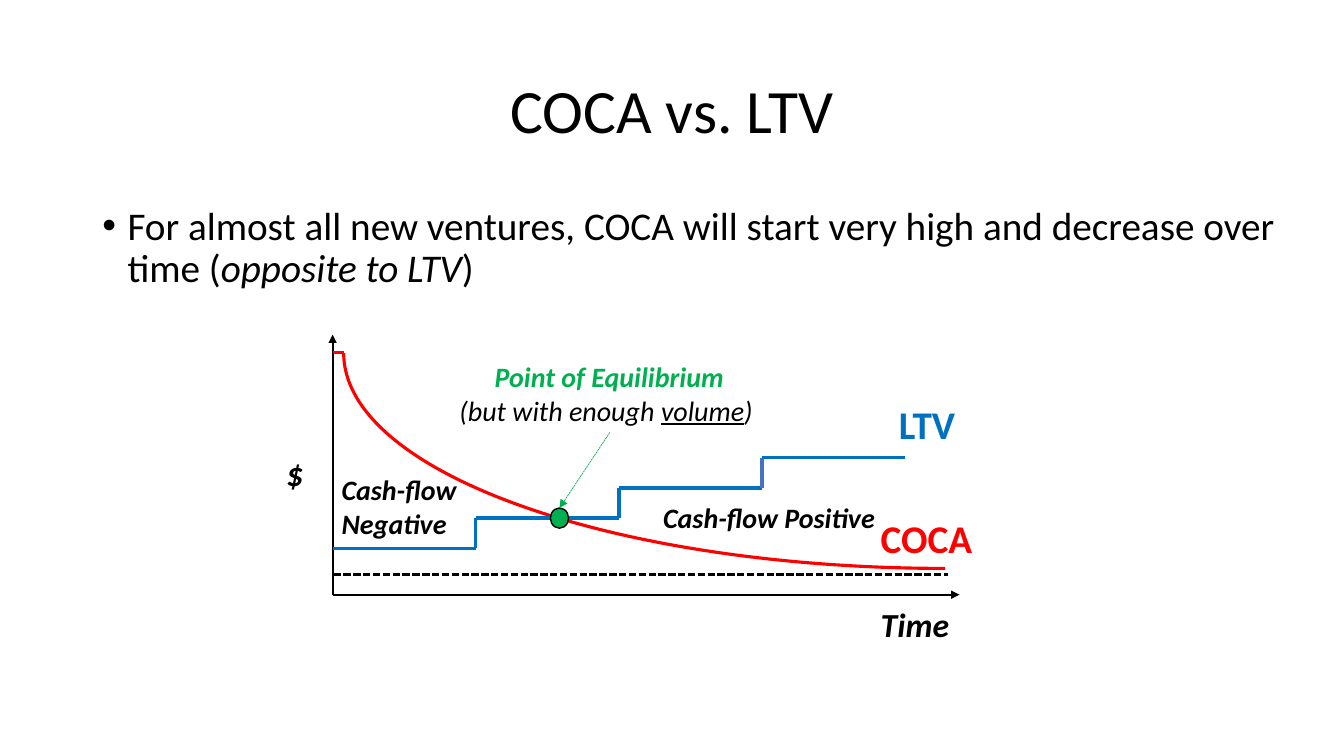
import pptx
import pptx.util
import pptx.dml.color
import pptx.enum.dml
import pptx.enum.shapes
import pptx.enum.text
import pptx.oxml
import pptx.oxml.ns
from dataclasses import dataclass
from lxml import etree

Pt = pptx.util.Pt
RGB = pptx.dml.color.RGBColor.from_string
ALIGN = pptx.enum.text.PP_ALIGN
ANCHOR = pptx.enum.text.MSO_ANCHOR
SHAPE = pptx.enum.shapes.MSO_SHAPE
DASH = pptx.enum.dml.MSO_LINE.SQUARE_DOT  # sysDash


@dataclass(frozen=True)
class Theme:
    font: str = "Calibri"
    black: str = "000000"
    red: str = "FF0000"
    blue: str = "0070C0"
    accent: str = "4472C4"
    green: str = "00B050"
    title: int = 44
    body: int = 28
    axis: int = 24
    note: int = 20


T = Theme()
ORIGIN_X, ORIGIN_Y = 237.6, 424.8
STEP_WIDTH, STEP_RISE, FIRST_STEP_Y = 102.24, 21.6, 391.68
CURVE_X, CURVE_Y = 245.5, 252


def add_bullet(p, indent):
    pPr = p._p.get_or_add_pPr()
    pPr.set("marL", str(Pt(indent)))
    pPr.set("indent", str(-Pt(indent)))
    for tag, key, value in (("a:buFont", "typeface", "Arial"), ("a:buChar", "char", "•")):
        etree.SubElement(pPr, pptx.oxml.ns.qn(tag)).set(key, value)


def add_text(s, box, paragraphs, size, color=T.black, bold=False, italic=False,
             align=ALIGN.LEFT, anchor=ANCHOR.TOP, wrap=False, spacing=None,
             before=0, bullet_indent=None):
    """Each paragraph is a list of (text, changes to the format) runs."""
    tf = s.shapes.add_textbox(*map(Pt, box)).text_frame
    tf.word_wrap = wrap
    tf.vertical_anchor = anchor
    for i, runs in enumerate(paragraphs):
        p = tf.add_paragraph() if i else tf.paragraphs[0]
        p.alignment = align
        p.space_before = Pt(before)
        if spacing:
            p.line_spacing = spacing
        if bullet_indent:
            add_bullet(p, bullet_indent)
        for text, changes in runs:
            look = {"color": color, "bold": bold, "italic": italic,
                    "underline": False, **changes}
            r = p.add_run()
            r.text = text
            r.font.name = T.font
            r.font.size = Pt(size)
            r.font.color.rgb = RGB(look["color"])
            r.font.bold = look["bold"]
            r.font.italic = look["italic"]
            r.font.underline = look["underline"]


def add_line(s, start, end, color, width, dash=None, arrow=False):
    c = s.shapes.add_connector(pptx.enum.shapes.MSO_CONNECTOR.STRAIGHT,
                               *map(Pt, start + end))
    c.line.color.rgb = RGB(color)
    c.line.width = Pt(width)
    if dash:
        c.line.dash_style = dash
    if arrow:
        ln = c.line._get_or_add_ln()
        etree.SubElement(ln, pptx.oxml.ns.qn("a:tailEnd")).set("type", "triangle")
    etree.SubElement(c._element.spPr, pptx.oxml.ns.qn("a:effectLst"))


def add_outlined(s, kind, box, line, width, fill=None, rotation=0):
    sp = s.shapes.add_shape(kind, *map(Pt, box))
    sp.shadow.inherit = False
    sp.rotation = rotation
    sp.line.color.rgb = RGB(line)
    sp.line.width = Pt(width)
    if fill:
        sp.fill.solid()
        sp.fill.fore_color.rgb = RGB(fill)
    else:
        sp.fill.background()


def add_axes(s):
    for end in ((685.4, ORIGIN_Y), (ORIGIN_X, 239)):
        add_line(s, (ORIGIN_X, ORIGIN_Y), end, T.black, 1.25, arrow=True)


def add_coca_curve(s):
    add_outlined(s, SHAPE.ARC, (CURVE_X, 98.6, 859, 307.4), T.red, 2.25, rotation=180)
    add_line(s, (ORIGIN_X, CURVE_Y), (CURVE_X, CURVE_Y), T.red, 2.25)
    add_line(s, (238.3, 410.4), (677.5, 410.4), T.black, 1.75, dash=DASH)


def add_ltv_stairs(s):
    riser_colors = (T.blue, T.blue, T.accent)
    for i in range(4):
        x, y = ORIGIN_X + i * STEP_WIDTH, FIRST_STEP_Y - i * STEP_RISE
        right = x + STEP_WIDTH
        add_line(s, (x, y), (right, y), T.blue, 2.5)
        if i < len(riser_colors):
            add_line(s, (right, y), (right, y - STEP_RISE), riser_colors[i], 2.5)


def add_labels(s):
    strong = {"bold": True, "italic": True}
    for text, box, size, look in (
        ("LTV", (635, 282.2, 55.4, 41), T.body, {"bold": True, "color": T.blue}),
        ("COCA", (622, 363.6, 80.6, 41), T.body, {"bold": True, "color": T.red}),
        ("Time", (622, 427.7, 64, 36), T.axis, strong),
        ("$", (197.3, 319.7, 26.6, 36), T.axis, strong),
        ("Cash-flow Positive", (466.6, 354.2, 167, 31.7), T.note, strong),
        ("Cash-flow\nNegative", (236.9, 334, 101.5, 55.4), T.note, strong),
    ):
        add_text(s, box, [[(t, {})] for t in text.split("\n")], size, **look)


def add_equilibrium(s):
    add_outlined(s, SHAPE.OVAL, (393.1, 362.9, 13, 14.4), T.black, 1, fill=T.green)
    add_text(s, (317.5, 253.4, 235.4, 55.4), [
        [("Point of Equilibrium", {"color": T.green, "bold": True})],
        [("(but with enough ", {}), ("volume", {"underline": True}), (") ", {})],
    ], T.note, italic=True, align=ALIGN.CENTER)
    add_line(s, (435.6, 308.9), (399.6, 362.9), T.green, 0.5, dash=DASH, arrow=True)


def main():
    prs = pptx.Presentation()
    prs.slide_width, prs.slide_height = Pt(960), Pt(540)
    s = prs.slides.add_slide(prs.slide_layouts[6])
    add_text(s, (66, 28.8, 828, 104.4), [[("COCA vs. LTV", {})]], T.title,
             align=ALIGN.CENTER, anchor=ANCHOR.MIDDLE, wrap=True, spacing=0.9)
    add_text(s, (66, 144, 867.6, 360.7), [[
        ("For almost all new ventures, COCA will start very high and decrease over time (", {}),
        ("opposite to LTV", {"italic": True}),
        (")", {}),
    ]], T.body, wrap=True, spacing=0.9, before=10, bullet_indent=18)
    add_axes(s)
    add_coca_curve(s)
    add_ltv_stairs(s)
    add_labels(s)
    add_equilibrium(s)
    prs.save("out.pptx")


if __name__ == "__main__":
    main()
